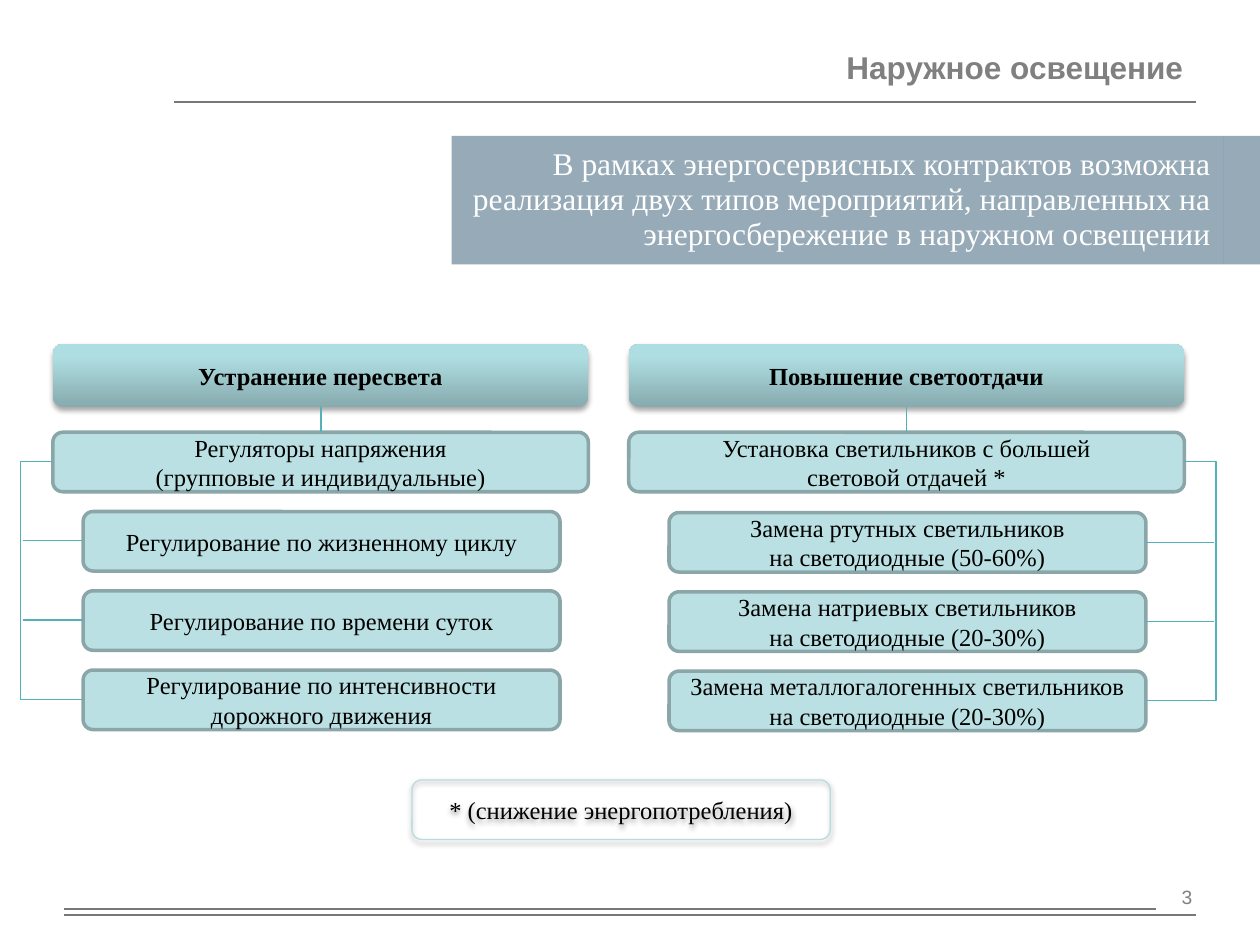
from copy import deepcopy

from lxml import etree
from pptx import Presentation
from pptx.dml import color
from pptx.enum import shapes, text
from pptx.oxml import ns
from pptx.util import Pt

SERIF = "Times New Roman"
TEAL = "54B1B8"
GREY = "777777"


def rgb(code):
    return color.RGBColor.from_string(code)


def write(frame, words, size=14, font=SERIF, ink="000000", bold=False,
          align=text.PP_ALIGN.CENTER, anchor=text.MSO_ANCHOR.MIDDLE, wrap=True):
    frame.text = words
    frame.word_wrap = wrap
    frame.vertical_anchor = anchor
    for para in frame.paragraphs:
        para.alignment = align
        para.font.size = Pt(size)
        para.font.name = font
        para.font.bold = bold
        para.font.color.rgb = rgb(ink)


RIGHT = text.PP_ALIGN.RIGHT
TOP = text.MSO_ANCHOR.TOP

deck = Presentation()
deck.slide_width, deck.slide_height = Pt(720), Pt(540)
slide = deck.slides.add_slide(deck.slide_layouts[5])
items = slide.shapes

title = items.title
title.left, title.top, title.width, title.height = Pt(474.5), Pt(23.8), Pt(208.8), Pt(29)
write(title.text_frame, "Наружное освещение", size=18, font="Arial", ink="808080",
      bold=True, align=RIGHT, anchor=TOP, wrap=False)
title.text_frame.auto_size = text.MSO_AUTO_SIZE.SHAPE_TO_FIT_TEXT

page = items.add_textbox(Pt(660), Pt(502.5), Pt(28.4), Pt(37.5))
write(page.text_frame, "3", size=11, font="Arial", ink="808080", align=RIGHT, anchor=TOP)

table = items.add_table(1, 2, Pt(258), Pt(77.6), Pt(462), Pt(73.4)).table
table.first_row = table.horz_banding = False
style = table._tbl.tblPr.find(ns.qn("a:tableStyleId"))
style.text = "{2D5ABB26-0587-4C30-8999-92F81FD0307C}"
for col, width in zip(table.columns, (441, 21)):
    col.width = Pt(width)
for cell in table.rows[0].cells:
    cell.fill.solid()
    cell.fill.fore_color.rgb = rgb("3B6079")
    tone = cell._tc.tcPr.find(".//" + ns.qn("a:srgbClr"))
    etree.SubElement(tone, ns.qn("a:alpha"), val="53000")
lead = table.cell(0, 0)
write(lead.text_frame, "В рамках энергосервисных контрактов возможна реализация двух типов "
      "мероприятий, направленных на энергосбережение в наружном освещении",
      size=18, ink="FFFFFF", align=RIGHT)
lead.vertical_anchor = text.MSO_ANCHOR.MIDDLE

heads = [(30.2, 306, "Устранение пересвета"), (359.3, 317.5, "Повышение светоотдачи")]
boxes = [
    (30.2, 247, 306, "Регуляторы напряжения\n(групповые и индивидуальные)"),
    (359.3, 247, 317.5, "Установка светильников с большей\nсветовой отдачей *"),
]
lists = [
    (47.5, 292.3, ["Регулирование по жизненному циклу", "Регулирование по времени суток",
                   "Регулирование по интенсивности\nдорожного движения"]),
    (382.3, 292.9, ["Замена ртутных светильников\nна светодиодные (50-60%)",
                    "Замена натриевых светильников\nна светодиодные (20-30%)",
                    "Замена металлогалогенных светильников\nна светодиодные (20-30%)"]),
]
for left, top, names in lists:
    boxes += [(left, top + 45.3 * i, 272.5, name) for i, name in enumerate(names)]

ROUND = shapes.MSO_SHAPE.ROUNDED_RECTANGLE
for left, top, width, words in boxes:
    box = items.add_shape(ROUND, Pt(left), Pt(top), Pt(width), Pt(34))
    box.shadow.inherit = False
    box.fill.solid()
    box.fill.fore_color.rgb = rgb("BBE0E3")
    box.line.color.rgb = rgb("8AA6A8")
    box.line.width = Pt(2)
    write(box.text_frame, words)

raised = []
for left, width, words in heads:
    head = items.add_shape(ROUND, Pt(left), Pt(196.5), Pt(width), Pt(36))
    head.fill.gradient()
    head.fill.gradient_angle = 90
    stops = head._element.spPr.find(".//" + ns.qn("a:gsLst"))
    stops.append(deepcopy(stops[1]))
    shades = [(0, "87ABAE"), (0.8, "AFDEE2"), (1, "AFE0E4")]
    for stop, (place, code) in zip(head.fill.gradient_stops, shades):
        stop.position = place
        stop.color.rgb = rgb(code)
    head.line.fill.background()
    write(head.text_frame, words, bold=True)
    raised.append((head, "35000"))

note = items.add_shape(ROUND, Pt(235.4), Pt(445.7), Pt(239), Pt(34))
note.fill.background()
note.line.color.rgb = rgb("B6DCDF")
note.line.width = Pt(0)
write(note.text_frame, "* (снижение энергопотребления)")
raised.append((note, "38000"))

for shape, alpha in raised:
    shape.shadow.inherit = False
    glow = shape._element.spPr.find(ns.qn("a:effectLst"))
    cast = etree.SubElement(glow, ns.qn("a:outerShdw"), blurRad=str(Pt(3.1)),
                            dist=str(Pt(1.8)), dir="5400000", rotWithShape="0")
    tone = etree.SubElement(cast, ns.qn("a:srgbClr"), val="000000")
    etree.SubElement(tone, ns.qn("a:alpha"), val=alpha)

lines = [
    (99.4, 58.1, 683.5, 58.1, GREY, 1, None),
    (36.7, 519.6, 660.4, 519.6, GREY, 1, None),
    (36.7, 522.8, 683.5, 522.8, GREY, 1.5, None),
    (30.2, 263.7, 47.5, 399.7, TEAL, 0.75, -105900),
    (676.8, 263.7, 655, 400.4, TEAL, 0.75, -82800),
]
for x in (183.4, 518):
    lines.append((x, 232.5, x, 247, TEAL, 0.75, None))
for x, end, y in ((13, 47.5, 309), (655, 694, 309.8)):
    for step in (0, 45.3):
        lines.append((x, y + step, end, y + step, TEAL, 0.75, None))

KIND = shapes.MSO_CONNECTOR
for x, y, end, low, ink, width, bend in lines:
    kind = KIND.STRAIGHT if bend is None else KIND.ELBOW
    line = items.add_connector(kind, Pt(x), Pt(y), Pt(end), Pt(low))
    line.line.color.rgb = rgb(ink)
    line.line.width = Pt(width)
    props = line._element.spPr
    etree.SubElement(props, ns.qn("a:effectLst"))
    if bend is not None:
        guide = props.find(".//" + ns.qn("a:avLst"))
        etree.SubElement(guide, ns.qn("a:gd"), name="adj1", fmla=f"val {bend}")

deck.save("out.pptx")
